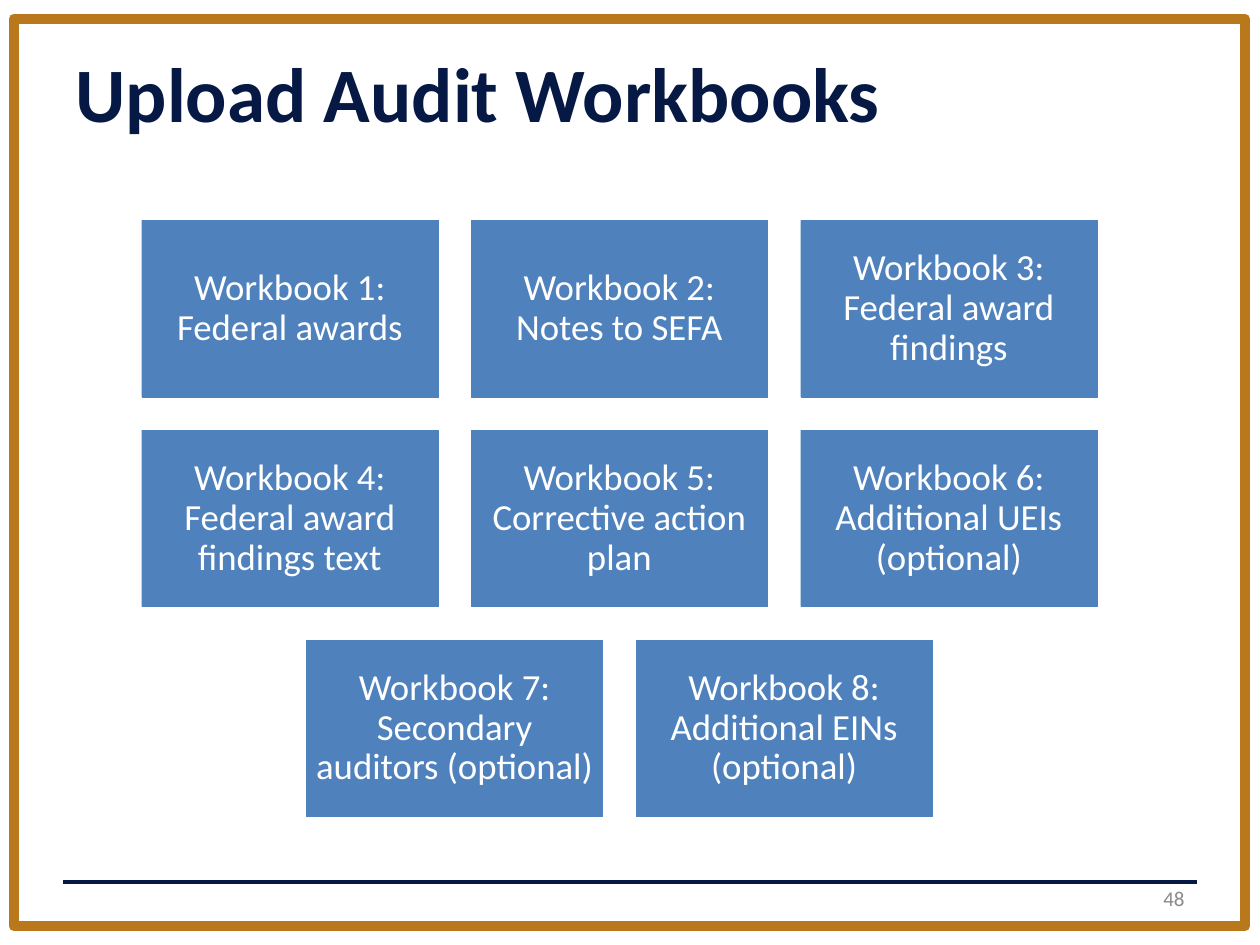
import pptx
import pptx.dml.color
import pptx.enum.shapes
import pptx.enum.text
import pptx.oxml.ns
import pptx.util
from lxml import etree

Inches = pptx.util.Inches
Pt = pptx.util.Pt
ALIGN = pptx.enum.text.PP_ALIGN
ANCHOR = pptx.enum.text.MSO_ANCHOR

NAVY, GOLD, BLUE, WHITE, GREY = "061944", "B9781C", "4F81BD", "FFFFFF", "898989"
BOX_WIDTH, BOX_HEIGHT, GAP = 2.35, 1.4, 0.265
GRID_CENTER, GRID_TOP = 4.915, 1.75

WORKBOOK_ROWS = [
    ["Federal awards", "Notes to SEFA", "Federal award findings"],
    ["Federal award findings text", "Corrective action plan",
     "Additional UEIs (optional)"],
    ["Secondary auditors (optional)", "Additional EINs (optional)"],
]


def color(value):
    return pptx.dml.color.RGBColor.from_string(value)


def set_attributes(target, values):
    for name, value in values.items():
        setattr(target, name, value)


def write_text(shape, text, size, fill, anchor, inset=None, bold=False, **paragraph):
    frame = shape.text_frame
    set_attributes(frame, {"word_wrap": True, "vertical_anchor": anchor,
                           "auto_size": pptx.enum.text.MSO_AUTO_SIZE.NONE})
    if inset is not None:
        set_attributes(frame, {"margin_left": inset, "margin_right": inset,
                               "margin_top": inset, "margin_bottom": inset})
    para = frame.paragraphs[0]
    set_attributes(para, paragraph)
    span = para.add_run()
    span.text = text
    set_attributes(span.font, {"name": "Calibri", "size": Pt(size), "bold": bold})
    span.font.color.rgb = color(fill)


def add_rectangle(slide, left, top, width, height, line, weight, fill=None):
    box = slide.shapes.add_shape(
        pptx.enum.shapes.MSO_SHAPE.RECTANGLE,
        Inches(left), Inches(top), Inches(width), Inches(height))
    box.shadow.inherit = False
    if fill:
        box.fill.solid()
        box.fill.fore_color.rgb = color(fill)
    else:
        box.fill.background()
    box.line.color.rgb = color(line)
    box.line.width = Pt(weight)
    return box


def add_frame(slide):
    frame = add_rectangle(slide, 0.11, 0.15, 9.77, 7.2, GOLD, 6)
    etree.SubElement(frame.line._get_or_add_ln(), pptx.oxml.ns.qn("a:round"))


def add_title(slide):
    title = slide.shapes.title
    set_attributes(title, {"left": Inches(0.5), "top": Inches(0.51),
                           "width": Inches(7.41), "height": Inches(1.25)})
    write_text(title, "Upload Audit Workbooks", 44, NAVY, ANCHOR.TOP,
               bold=True, alignment=ALIGN.LEFT, line_spacing=0.7)


def add_workbooks(slide):
    """Lay out the numbered workbooks, with each row centred on the grid."""
    number = 0
    for row, names in enumerate(WORKBOOK_ROWS):
        row_width = len(names) * (BOX_WIDTH + GAP) - GAP
        for column, name in enumerate(names):
            number += 1
            left = GRID_CENTER - row_width / 2 + column * (BOX_WIDTH + GAP)
            top = GRID_TOP + row * (BOX_HEIGHT + GAP)
            box = add_rectangle(slide, left, top, BOX_WIDTH, BOX_HEIGHT,
                                BLUE, 0.25, BLUE)
            write_text(box, f"Workbook {number}: {name}", 21, WHITE, ANCHOR.MIDDLE,
                       Inches(0.06), alignment=ALIGN.CENTER, line_spacing=0.9)


def add_footer(slide):
    rule = slide.shapes.add_connector(
        pptx.enum.shapes.MSO_CONNECTOR.STRAIGHT,
        Inches(9.5), Inches(7), Inches(0.5), Inches(7))
    rule.line.color.rgb = color(NAVY)
    rule.line.width = Pt(2)
    etree.SubElement(rule._element.spPr, pptx.oxml.ns.qn("a:effectLst"))
    page_number = slide.shapes.add_textbox(
        Inches(7.17), Inches(6.93), Inches(2.33), Inches(0.4))
    write_text(page_number, "48", 12, GREY, ANCHOR.MIDDLE, alignment=ALIGN.RIGHT)


def main():
    deck = pptx.Presentation()
    set_attributes(deck, {"slide_width": Inches(10), "slide_height": Inches(7.5)})
    slide = deck.slides.add_slide(deck.slide_layouts[5])
    add_frame(slide)
    add_title(slide)
    add_workbooks(slide)
    add_footer(slide)
    deck.save("out.pptx")


if __name__ == "__main__":
    main()
